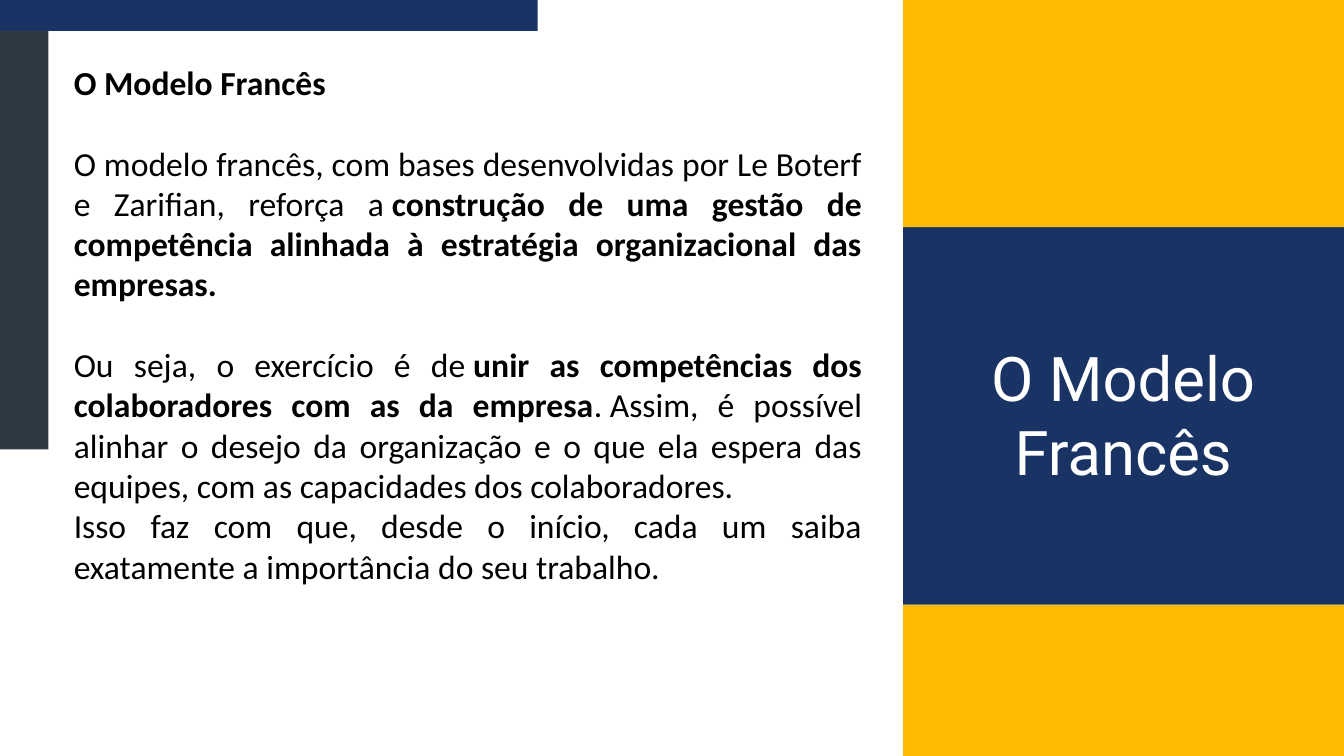
from pptx import Presentation
from pptx.dml.color import RGBColor
from pptx.enum.shapes import MSO_SHAPE as Shape
from pptx.enum.text import MSO_AUTO_SIZE as AutoSize, PP_ALIGN as Align
from pptx.util import Pt

NAVY, YELLOW, SLATE = "1A3365", "FFBB00", "2F3942"
WIDTH, HEIGHT = 1440, 810
PANEL_LEFT = 967.68
PANEL_WIDTH = WIDTH - PANEL_LEFT


def rgb(value):
    return RGBColor.from_string(value)


def add_text(box, inset, paragraphs, align, font_format):
    """Fill a text box; each paragraph is (space before, [(text, bold), ...])."""
    left, top, width, height = map(Pt, box)
    frame = slide.shapes.add_textbox(left, top, width, height).text_frame
    frame_format = {"word_wrap": True, "auto_size": AutoSize.SHAPE_TO_FIT_TEXT}
    if inset is not None:
        for side in ("left", "top", "right", "bottom"):
            frame_format[f"margin_{side}"] = Pt(inset)
    for name, value in frame_format.items():
        setattr(frame, name, value)
    for index, (gap, runs) in enumerate(paragraphs):
        paragraph = frame.add_paragraph() if index else frame.paragraphs[0]
        paragraph.alignment = align
        paragraph.space_before = Pt(gap)
        for text, bold in runs:
            run = paragraph.add_run()
            run.text = text
            run.font.bold = bold
            run.font.color.rgb = rgb(font_format["color"])
            for name in ("name", "size"):
                setattr(run.font, name, font_format[name])


prs = Presentation()
prs.slide_width, prs.slide_height = Pt(WIDTH), Pt(HEIGHT)
slide = prs.slides.add_slide(prs.slide_layouts[6])

# Colour bands: left edge, top edge and the right panel
bands = [
    (0, 33.12, 51.84, 448.56, SLATE),
    (PANEL_LEFT, 648, PANEL_WIDTH, 162, YELLOW),
    (PANEL_LEFT, 240.48, PANEL_WIDTH, 407.52, NAVY),
    (0, 0, 576, 33.12, NAVY),
    (PANEL_LEFT, 0, PANEL_WIDTH, 243.36, YELLOW),
]
for *box, color in bands:
    band = slide.shapes.add_shape(Shape.RECTANGLE, *map(Pt, box))
    band.shadow.inherit = False
    band.fill.solid()
    band.fill.fore_color.rgb = rgb(color)
    band.line.fill.background()

# Body text, with one line of space between sections
LINE = 43.2
body = [
    (0, [("O Modelo Francês", True)]),
    (LINE, [
        ("O modelo francês, com bases desenvolvidas por Le Boterf e Zarifian, "
         "reforça a\u00a0", False),
        ("construção de uma gestão de competência alinhada à estratégia "
         "organizacional das empresas.", True),
    ]),
    (LINE, [
        ("Ou seja, o exercício é de\u00a0", False),
        ("unir as competências dos colaboradores com as da empresa", True),
        (".\u00a0Assim, é possível alinhar o desejo da organização e o que ela "
         "espera das equipes, com as capacidades dos colaboradores.", False),
    ]),
    (0, [("Isso faz com que, desde o início, cada um saiba exatamente a "
          "importância do seu trabalho.", False)]),
]
add_text((72, 62.64, 858.96, 617.76), None, body, Align.JUSTIFY,
         {"name": "Calibri", "size": Pt(36), "color": "000000"})

# Panel title
add_text((978.48, 364.32, 450, 159.84), 0, [(0, [("O Modelo Francês", False)])],
         Align.CENTER, {"name": "Roboto", "size": Pt(66), "color": "FFFFFF"})

prs.save("out.pptx")
